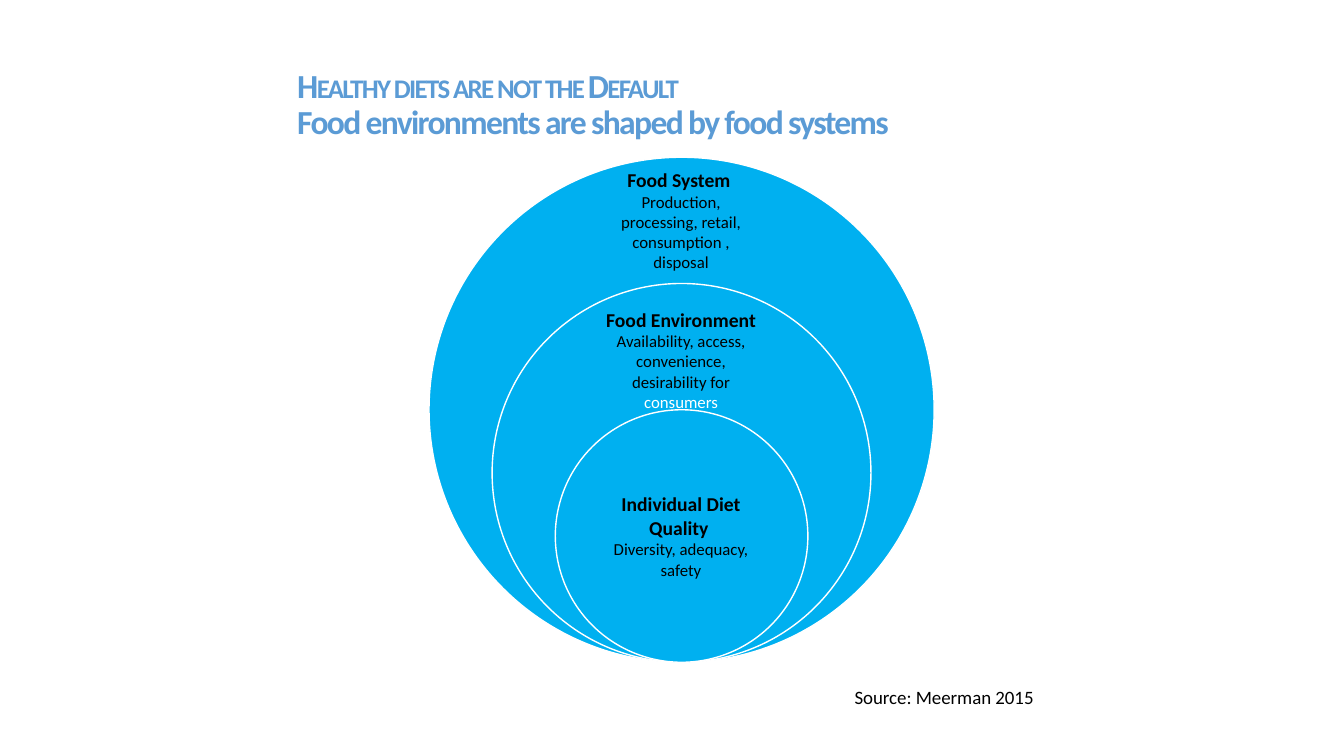
from dataclasses import dataclass

from pptx import Presentation
from pptx.dml.color import RGBColor
from pptx.enum.shapes import MSO_SHAPE
from pptx.enum.text import MSO_ANCHOR, PP_ALIGN
from pptx.util import Inches, Pt

OVAL = MSO_SHAPE.OVAL
TOP, MIDDLE = MSO_ANCHOR.TOP, MSO_ANCHOR.MIDDLE
LEFT, CENTER, RIGHT = PP_ALIGN.LEFT, PP_ALIGN.CENTER, PP_ALIGN.RIGHT

COLORS = {"title": "5B9BD5", "circle": "00B0F0", "white": "FFFFFF", "black": "000000"}
HEADING = {"name": "Calibri", "size": Pt(14), "bold": True}
BODY = {"name": "Calibri", "size": Pt(12), "bold": False}
TITLE = {"name": "Calibri", "size": Pt(24), "bold": True}
SOURCE = {"name": "Calibri", "size": Pt(13.5), "bold": False}

# Nested circles share a centre line and a bottom point
CENTER_X, BOTTOM, OUTER = 6.76, 6.57, 5.01


@dataclass
class Ring:
    scale: float
    box: tuple[float, float, float, float]
    heading: str
    body: str
    ending: str = ""
    anchor: MSO_ANCHOR = MIDDLE
    inset_top: float = 0.11


RINGS = [
    Ring(1, (5.88, 1.81, 1.75, 0.75), "Food System ",
         "Production, processing, retail, consumption , disposal"),
    Ring(0.75, (5.88, 3.05, 1.75, 0.71), "Food Environment",
         "Availability, access, convenience, desirability for ", "consumers", TOP, 0),
    Ring(0.5, (5.87, 4.69, 1.77, 1.25), "Individual Diet Quality ",
         "Diversity, adequacy, safety"),
]


def add_run(p, text: str, style: dict, color: str = "black"):
    r = p.add_run()
    r.text = text
    for key, value in style.items():
        setattr(r.font, key, value)
    r.font.color.rgb = RGBColor.from_string(COLORS[color])
    return r


def add_box(slide, box: tuple[float, float, float, float], align: PP_ALIGN, **frame):
    tf = slide.shapes.add_textbox(*map(Inches, box)).text_frame
    tf.word_wrap = True
    for key, value in frame.items():
        setattr(tf, key, value)
    tf.paragraphs[0].alignment = align
    return tf


def add_title(slide) -> None:
    p = add_box(slide, (2.85, 0.64, 6.54, 0.92), LEFT).paragraphs[0]
    p.line_spacing = 0.9
    first = add_run(p, "Healthy diets are not the Default", TITLE, "title")
    p.add_line_break()
    second = add_run(p, "Food environments are shaped by food systems", TITLE, "title")
    for r, caps in ((first, "small"), (second, "none")):
        for key, value in {"spc": "-120", "cap": caps}.items():
            r.font._element.set(key, value)


def add_ring(slide, ring: Ring) -> None:
    size = OUTER * ring.scale
    s = slide.shapes.add_shape(OVAL, Inches(CENTER_X - size / 2), Inches(BOTTOM - size),
                               Inches(size), Inches(size))
    s.shadow.inherit = False
    s.fill.solid()
    s.fill.fore_color.rgb = RGBColor.from_string(COLORS["circle"])
    s.line.color.rgb = RGBColor.from_string(COLORS["white"])
    s.line.width = Pt(1)

    side = Inches(0.11)
    tf = add_box(slide, ring.box, CENTER, vertical_anchor=ring.anchor,
                 margin_left=side, margin_right=side, margin_bottom=side,
                 margin_top=Inches(ring.inset_top))
    add_run(tf.paragraphs[0], ring.heading, HEADING)
    p = tf.add_paragraph()
    p.alignment = CENTER
    add_run(p, ring.body, BODY)
    if ring.ending:
        add_run(p, ring.ending, BODY, "white")


def main() -> None:
    prs = Presentation()
    prs.slide_width, prs.slide_height = Inches(13.33), Inches(7.5)
    slide = prs.slides.add_slide(prs.slide_layouts[6])

    add_title(slide)
    for ring in RINGS:
        add_ring(slide, ring)

    # Source line
    tf = add_box(slide, (8.31, 6.75, 2.04, 0.33), RIGHT)
    add_run(tf.paragraphs[0], "Source: Meerman 2015", SOURCE)

    prs.save("out.pptx")


if __name__ == "__main__":
    main()
